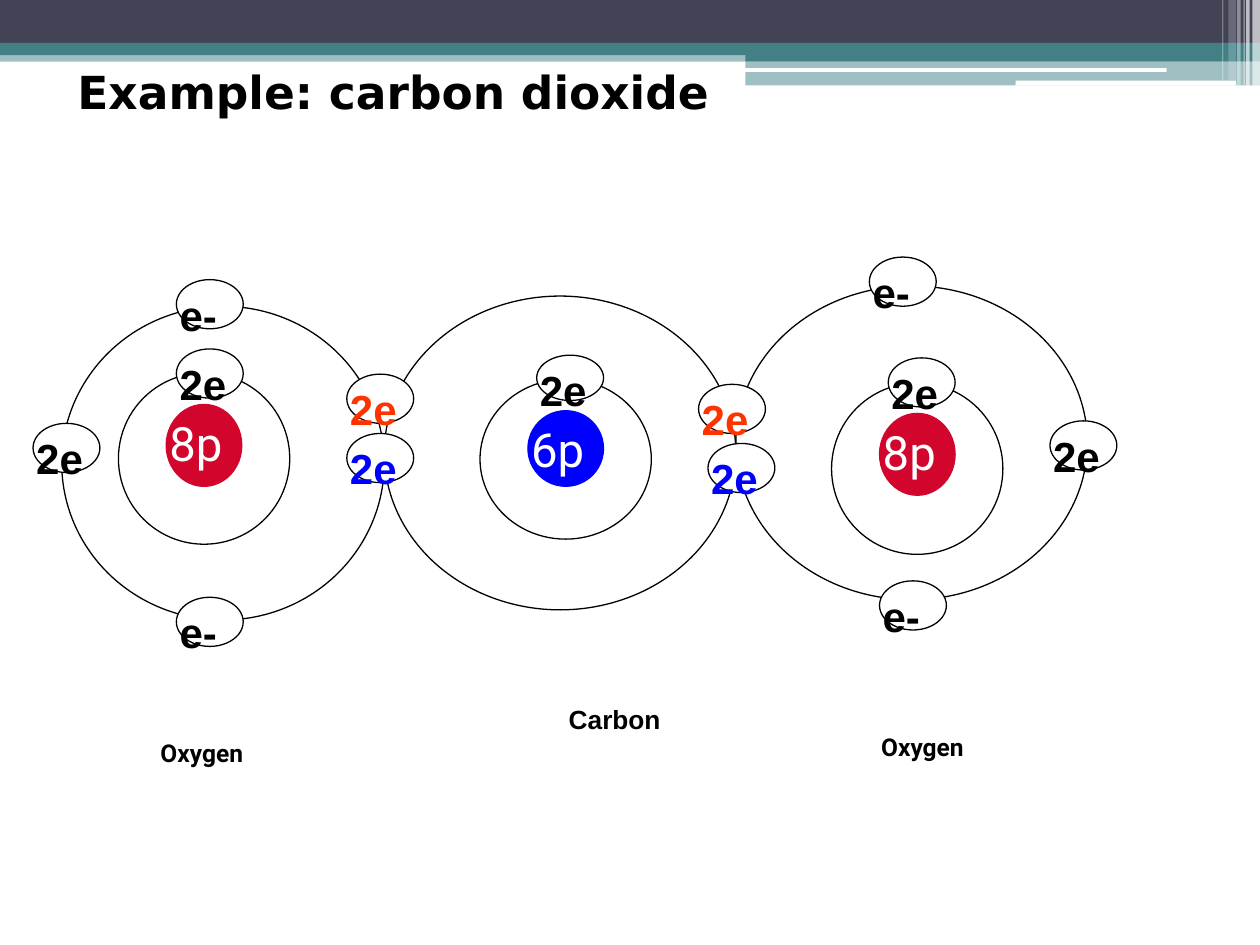
import pptx
import pptx.dml.color
import pptx.enum.shapes
import pptx.enum.text
import pptx.oxml
import pptx.oxml.ns
import pptx.oxml.xmlchemy
import pptx.util

Pt = pptx.util.Pt
RGB = pptx.dml.color.RGBColor
MSO = pptx.enum.shapes.MSO_SHAPE

BLACK = RGB(0x00, 0x00, 0x00)
WHITE = RGB(0xFF, 0xFF, 0xFF)
SLATE = RGB(0x42, 0x44, 0x56)
TEAL = RGB(0x43, 0x80, 0x86)
RED = RGB(0xD2, 0x06, 0x2D)
ORANGE = RGB(0xFF, 0x33, 0x00)
BLUE = RGB(0x00, 0x00, 0xFF)


class Painter:
    """Holds the text style and the current slide; lengths are in points."""
    inset = 6
    electron_size = (38.2, 28.1)
    label_shift = 4.2

    def __init__(self, slide):
        self.s = slide

    def place(self, sp, x, y, w, h):
        sp.left, sp.top, sp.width, sp.height = Pt(x), Pt(y), Pt(w), Pt(h)

    def fill_text(self, sp, text, size, font, color, bold):
        tf = sp.text_frame
        tf.word_wrap = True
        tf.auto_size = pptx.enum.text.MSO_AUTO_SIZE.NONE
        tf.vertical_anchor = pptx.enum.text.MSO_ANCHOR.TOP
        tf.margin_left = tf.margin_right = Pt(self.inset)
        tf.margin_top, tf.margin_bottom = Pt(3 + size / 10), 0
        p = tf.paragraphs[0]
        p.alignment = pptx.enum.text.PP_ALIGN.LEFT
        r = p.add_run()
        r.text = text
        r.font.size, r.font.name, r.font.bold = Pt(size), font, bold
        r.font.color.rgb = color

    def title(self, box, text):
        sp = self.s.shapes.title
        self.place(sp, *box)
        self.fill_text(sp, text, 26, "DejaVu Sans", BLACK, True)

    def text(self, box, text, size, font, color=BLACK, bold=True):
        sp = self.s.shapes.add_textbox(*map(Pt, box))
        self.fill_text(sp, text, size, font, color, bold)

    def shape(self, kind, box, fill=None, line=None, alpha=100):
        sp = self.s.shapes.add_shape(kind, *map(Pt, box))
        sp.shadow.inherit = False
        if fill is None:
            sp.fill.background()
        else:
            sp.fill.solid()
            sp.fill.fore_color.rgb = fill
        if alpha < 100:
            clr = sp.element.spPr.find(".//" + pptx.oxml.ns.qn("a:srgbClr"))
            a = pptx.oxml.xmlchemy.OxmlElement("a:alpha")
            a.set("val", str(alpha * 1000))
            clr.append(a)
        if line is None:
            sp.line.fill.background()
        else:
            sp.line.color.rgb = line
            sp.line.width = Pt(0)

    def shell(self, box):
        self.shape(MSO.OVAL, box, line=BLACK)

    def nucleus(self, box, text, color):
        self.shape(MSO.OVAL, box, color, color)
        x, y = box[:2]
        self.text((x - self.label_shift, y, 51.8, 33.8), text, 27, "Roboto",
                  WHITE, False)

    def electron(self, x, y, text, color=BLACK, h=None):
        w, full = self.electron_size
        self.shape(MSO.OVAL, (x, y, w, h or full), WHITE, BLACK)
        self.text((x - self.label_shift, y, 46.1, 30.2), text, 24, "Arial",
                  color)


def main():
    prs = pptx.Presentation()
    prs.slide_width, prs.slide_height = Pt(720), Pt(540)
    s = prs.slides.add_slide(prs.slide_layouts[5])
    art = Painter(s)

    # Header bands
    for box, color, alpha in [
        ((0, 28.8, 720, 6.5), TEAL, 50),
        ((0, 0, 720, 24.5), SLATE, 100),
        ((0, 24.5, 720, 7), TEAL, 100),
        ((426, 28, 294, 7), TEAL, 100),
        ((426, 34.6, 294, 14.2), TEAL, 50),
    ]:
        art.shape(MSO.RECTANGLE, box, color, alpha=alpha)
    for box in [(425.5, 38.9, 241.2, 2.2), (580.3, 46.1, 126, 2.8)]:
        art.shape(MSO.ROUNDED_RECTANGLE, box, WHITE)

    # Pale stripes at the right edge of the header
    for x, w, h, alpha in [
        (715.7, 4.3, 49, 65), (712.1, 2, 49, 65), (710.6, 0.7, 49, 60),
        (707, 2, 49, 40), (702, 4.3, 46, 20), (698.4, 0.7, 46, 30),
    ]:
        art.shape(MSO.RECTANGLE, (x, 0, w, h), WHITE, alpha=alpha)

    art.title((38.2, 31, 459.4, 32.4), "Example: carbon dioxide")

    # Atoms: outer shell, inner shell, nucleus
    for outer, inner, core, protons, color in [
        ((35.3, 175, 184.3, 179.3), (67.7, 213.1, 97.9, 97.9),
         (95, 231.1, 43.2, 46.8), "8p", RED),
        ((219.6, 169.2, 200.9, 179.3), (274.3, 216.7, 97.9, 91.4),
         (301.7, 234.7, 43.2, 43.2), "6p", BLUE),
        ((420.5, 163.4, 200.9, 179.3), (475.2, 218.9, 97.9, 97.9),
         (502.6, 236.2, 43.2, 46.8), "8p", RED),
    ]:
        art.shell(outer)
        art.shell(inner)
        art.nucleus(core, protons, color)

    # Inner electrons
    art.electron(100.8, 199.4, "2e")
    art.electron(306.7, 203, "2e", h=25.9)
    art.electron(507.6, 204.5, "2e")

    # Unshared outer electrons
    for x, y, text in [
        (100.8, 159.8, "e-"), (100.8, 341.3, "e-"), (18.9, 241.9, "2e"),
        (496.8, 146.9, "e-"), (502.6, 331.9, "e-"), (600, 240.5, "2e"),
    ]:
        art.electron(x, y, text)

    # Shared electron pairs
    for x, y, color in [
        (198.2, 213.8, ORANGE), (198.2, 247.7, BLUE),
        (399.2, 219.6, ORANGE), (404.6, 253.4, BLUE),
    ]:
        art.electron(x, y, "2e", color)

    # Element names
    art.text((85.7, 417.6, 72, 20.2), "Oxygen", 14, "Roboto")
    art.text((497.5, 414, 72, 20.2), "Oxygen", 14, "Roboto")
    art.text((319, 397.4, 69.8, 21.6), "Carbon", 15, "Arial")

    prs.save("out.pptx")


if __name__ == "__main__":
    main()
